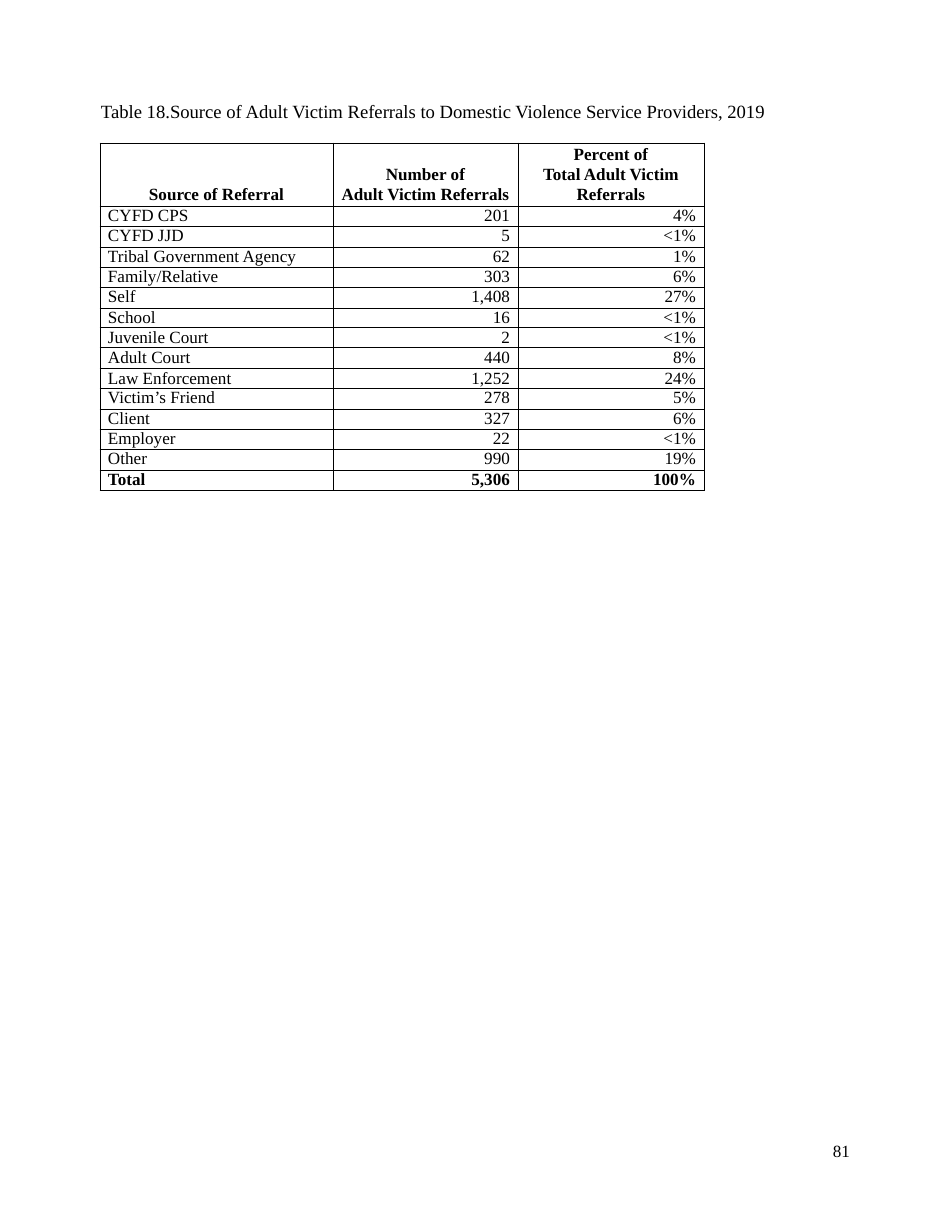
"""Build a page with a table of adult victim referral sources."""
import pptx
import pptx.dml.color
import pptx.enum.text
import pptx.oxml
import pptx.oxml.ns
import pptx.util

PX = 914400 // 112
ALIGN = pptx.enum.text.PP_ALIGN
ANCHOR = pptx.enum.text.MSO_ANCHOR
BLACK = "000000"


def style(para, size, bold=False, align=ALIGN.LEFT, spacing=None):
    para.font.name = "Times New Roman"
    para.font.size = pptx.util.Pt(size)
    para.font.bold = bold
    para.font.color.rgb = pptx.dml.color.RGBColor.from_string(BLACK)
    para.alignment = align
    if spacing:
        para.line_spacing = pptx.util.Pt(spacing)


def add_borders(cell):
    properties = cell._tc.get_or_add_tcPr()
    for side in ("lnL", "lnR", "lnT", "lnB"):
        properties.append(pptx.oxml.parse_xml(
            f'<a:{side} {pptx.oxml.ns.nsdecls("a")} w="6350"><a:solidFill>'
            f'<a:srgbClr val="{BLACK}"/></a:solidFill></a:{side}>'))


deck = pptx.Presentation()
deck.slide_width = pptx.util.Inches(8.5)
deck.slide_height = pptx.util.Inches(11)
page = deck.slides.add_slide(deck.slide_layouts[6])

title = "Table 18.Source of Adult Victim Referrals to Domestic Violence Service Providers, 2019"
for text, size, left, top, width, height in (
    ("81", 11, 832, 1137, 20, 24),
    (title, 12, 100, 97, 673, 26),
):
    box = page.shapes.add_textbox(left * PX, top * PX, width * PX, height * PX)
    frame = box.text_frame
    frame.word_wrap = True
    frame.margin_left, frame.margin_top = PX, 3 * PX
    frame.margin_right = frame.margin_bottom = 0
    frame.text = text
    style(frame.paragraphs[0], size)

rows = [
    ("Source of Referral", "Number of\nAdult Victim Referrals",
     "Percent of\nTotal Adult Victim\nReferrals"),
    ("CYFD CPS", "201", "4%"),
    ("CYFD JJD", "5", "<1%"),
    ("Tribal Government Agency", "62", "1%"),
    ("Family/Relative", "303", "6%"),
    ("Self", "1,408", "27%"),
    ("School", "16", "<1%"),
    ("Juvenile Court", "2", "<1%"),
    ("Adult Court", "440", "8%"),
    ("Law Enforcement", "1,252", "24%"),
    ("Victim’s Friend", "278", "5%"),
    ("Client", "327", "6%"),
    ("Employer", "22", "<1%"),
    ("Other", "990", "19%"),
    ("Total", "5,306", "100%"),
]
column_widths = (233, 185, 186)
header_height, body_height = 63, 285
body_rows = len(rows) - 1
edges = [round(body_height * step / body_rows) for step in range(len(rows))]
row_heights = [header_height] + [low - high for high, low in zip(edges, edges[1:])]

table = page.shapes.add_table(
    len(rows), len(column_widths), 100 * PX, 143 * PX,
    sum(column_widths) * PX, sum(row_heights) * PX).table
table.first_row = table.horz_banding = False
for column, width in zip(table.columns, column_widths):
    column.width = width * PX
for row, height in zip(table.rows, row_heights):
    row.height = height * PX

for row_index, values in enumerate(rows):
    header = row_index == 0
    bold = row_index in (0, body_rows)
    for column_index, value in enumerate(values):
        cell = table.cell(row_index, column_index)
        add_borders(cell)
        cell.fill.background()
        cell.margin_left = cell.margin_right = 0 if header else 8 * PX
        cell.margin_top = 0
        cell.margin_bottom = 2 * PX if header else 0
        cell.vertical_anchor = ANCHOR.BOTTOM if header else ANCHOR.TOP
        cell.text_frame.text = value
        if header:
            align = ALIGN.CENTER
        else:
            align = ALIGN.RIGHT if column_index else ALIGN.LEFT
        for para in cell.text_frame.paragraphs:
            style(para, 11, bold, align, 12.7 if header else 12.2)

deck.save("out.pptx")
